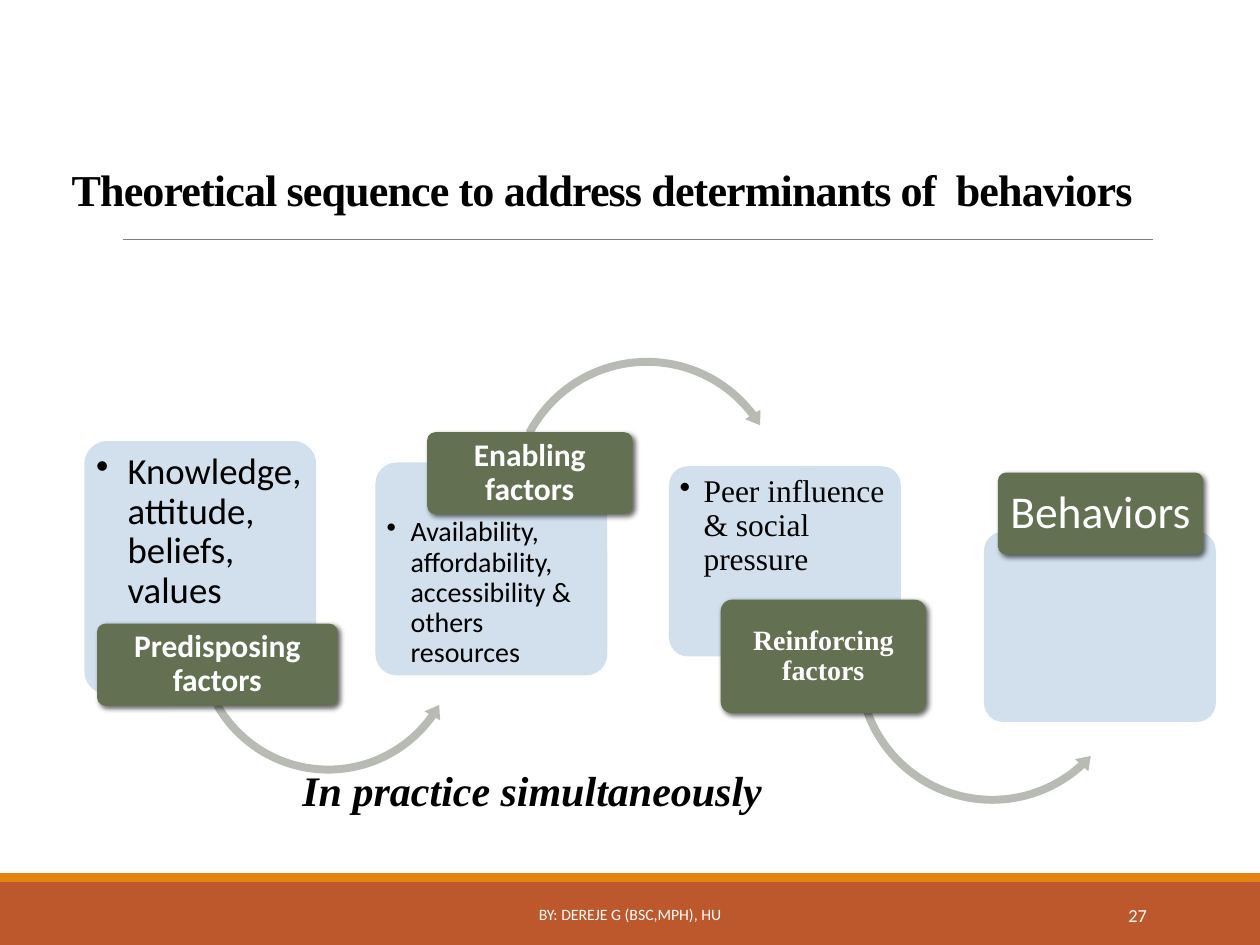
"""Builds the slide on the sequence of determinants of behavior."""
from dataclasses import dataclass
from typing import Optional

import pptx
import pptx.dml.color
import pptx.enum.shapes
import pptx.enum.text
import pptx.oxml
import pptx.oxml.ns
import pptx.util

SHAPES = pptx.enum.shapes.MSO_SHAPE
ALIGN = pptx.enum.text.PP_ALIGN
ANCHOR = pptx.enum.text.MSO_ANCHOR
NAMESPACE = pptx.oxml.ns.nsdecls("a")

# The grid has 100 columns and 75 rows, each a tenth of an inch.
COLUMNS, ROWS = 100, 75
CELL = pptx.util.Inches(0.1)

COLORS = {
    "band": "BD582C",
    "stripe": "E48312",
    "rule": "808080",
    "card": "CCDDEA",
    "label": "637052",
    "arrow": "B7BBB3",
    "dark": "000000",
    "light": "FFFFFF",
}
SERIF, SANS = "Times New Roman", "Calibri"
CARD_WIDTH = 18.4


@dataclass(frozen=True)
class Area:
    """A rectangle in grid columns and rows."""
    column: float
    row: float
    width: float
    height: float

    def lengths(self) -> list:
        return [round(n * CELL) for n in (self.column, self.row, self.width, self.height)]


@dataclass(frozen=True)
class Arrow:
    area: Area
    kind: SHAPES
    adjustments: tuple


@dataclass(frozen=True)
class Stage:
    card: Area
    label: Area
    heading: str
    heading_size: float
    bold: bool = True
    font: str = SANS
    detail: str = ""
    detail_size: float = 18
    indent: float = 1.9
    text_top: float = 0.4
    arrow: Optional[Arrow] = None


STAGES = [
    Stage(Area(6.7, 35, CARD_WIDTH, 20.1), Area(7.7, 49.5, 19.1, 6.5),
          "Predisposing factors", 18,
          detail="Knowledge, attitude, beliefs, values", detail_size=21, indent=2.5,
          arrow=Arrow(Area(15.2, 40.1, 21.7, 21.7), SHAPES.LEFT_CIRCULAR_ARROW,
                      (0.029, 3.49, 21.23, 90.22, 0.033))),
    Stage(Area(29.8, 36.7, CARD_WIDTH, 16.9), Area(33.9, 34.3, 16.3, 6.5),
          "Enabling factors", 18,
          detail="Availability, affordability, accessibility & others resources",
          detail_size=16, text_top=3.9,
          arrow=Arrow(Area(40.1, 28, 22.5, 22.5), SHAPES.CIRCULAR_ARROW,
                      (0.028, 3.37, 193.72, 124.6, 0.032))),
    Stage(Area(53.1, 37, CARD_WIDTH, 15.1), Area(57.2, 47.6, 16.3, 9),
          "Reinforcing factors", 16, font=SERIF,
          detail="Peer influence & social pressure", text_top=0.3,
          arrow=Arrow(Area(67.5, 41.7, 22.5, 22.5), SHAPES.LEFT_CIRCULAR_ARROW,
                      (0.028, 3.36, 28.59, 97.72, 0.032))),
    Stage(Area(78.1, 42.2, CARD_WIDTH, 15.1), Area(79.2, 37.5, 16.3, 6.5),
          "Behaviors", 26, bold=False),
]


def color(name: str) -> pptx.dml.color.RGBColor:
    return pptx.dml.color.RGBColor.from_string(COLORS[name])


def add_shape(page, kind, area: Area, fill: str, adjustments: tuple = ()):
    shape = page.shapes.add_shape(kind, *area.lengths())
    shape.shadow.inherit = False
    shape.fill.solid()
    shape.fill.fore_color.rgb = color(fill)
    shape.line.fill.background()
    for index, value in enumerate(adjustments):
        shape.adjustments[index] = value
    return shape


def write(shape, text: str, *, size: float, font: str = SANS, fill: str = "dark",
          bold: bool = False, italic: bool = False, align=ALIGN.LEFT,
          anchor=ANCHOR.MIDDLE, spacing: float = 1.0,
          insets: tuple = (1, 0.5, 1, 0.5), tracking: float = 0,
          bullet_indent: float = 0) -> None:
    """Insets run left, top, right, bottom; they and the indent are in grid cells."""
    frame = shape.text_frame
    frame.word_wrap = True
    frame.vertical_anchor = anchor
    (frame.margin_left, frame.margin_top,
     frame.margin_right, frame.margin_bottom) = [round(n * CELL) for n in insets]
    para = frame.paragraphs[0]
    para.alignment = align
    para.line_spacing = spacing
    span = para.add_run()
    span.text = text
    span.font.name = font
    span.font.size = pptx.util.Pt(size)
    span.font.bold = bold
    span.font.italic = italic
    span.font.color.rgb = color(fill)
    if tracking:
        span.font._element.set("spc", str(round(tracking * 100)))
    if bullet_indent:
        properties = para._p.get_or_add_pPr()
        indent = round(bullet_indent * CELL)
        properties.set("marL", str(indent))
        properties.set("indent", str(-indent))
        properties.append(pptx.oxml.parse_xml(f'<a:buChar {NAMESPACE} char="•"/>'))


def add_text(page, area: Area, text: str, **style) -> None:
    write(page.shapes.add_textbox(*area.lengths()), text, **style)


def make_translucent(shape, percent: int) -> None:
    tint = shape.fill._xPr.find(".//" + pptx.oxml.ns.qn("a:srgbClr"))
    tint.append(pptx.oxml.parse_xml(f'<a:alpha {NAMESPACE} val="{percent * 1000}"/>'))


def cast_shadow(shape) -> None:
    effects = shape._element.spPr.find(pptx.oxml.ns.qn("a:effectLst"))
    effects.append(pptx.oxml.parse_xml(
        f'<a:outerShdw {NAMESPACE} blurRad="38100" dist="25400" dir="2700000" rotWithShape="0">'
        f'<a:srgbClr val="{COLORS["dark"]}"><a:alpha val="60000"/></a:srgbClr></a:outerShdw>'))


def add_rule(page, left: float, right: float, row: float) -> None:
    ends = [round(n * CELL) for n in (left, row, right, row)]
    rule = page.shapes.add_connector(pptx.enum.shapes.MSO_CONNECTOR.STRAIGHT, *ends)
    rule.line.color.rgb = color("rule")
    rule.line.width = pptx.util.Pt(0.5)
    rule._element.spPr.append(pptx.oxml.parse_xml(f"<a:effectLst {NAMESPACE}/>"))


def add_stage(page, stage: Stage) -> None:
    """Draws the card, then the arrow to the next stage, then the label on top."""
    card = add_shape(page, SHAPES.ROUNDED_RECTANGLE, stage.card, "card", (0.1,))
    make_translucent(card, 90)
    if stage.detail:
        write(card, stage.detail, size=stage.detail_size, font=stage.font,
              anchor=ANCHOR.TOP, spacing=0.9, bullet_indent=stage.indent,
              insets=(0.4, stage.text_top, 0.3, 0))
    if stage.arrow:
        add_shape(page, stage.arrow.kind, stage.arrow.area, "arrow", stage.arrow.adjustments)
    label = add_shape(page, SHAPES.ROUNDED_RECTANGLE, stage.label, "label", (0.1,))
    cast_shadow(label)
    write(label, stage.heading, size=stage.heading_size, font=stage.font, fill="light",
          bold=stage.bold, align=ALIGN.CENTER, spacing=0.9, insets=(0.4, 0.3, 0.4, 0.3))


def main() -> None:
    deck = pptx.Presentation()
    deck.slide_width, deck.slide_height = COLUMNS * CELL, ROWS * CELL
    page = deck.slides.add_slide(deck.slide_layouts[6])

    add_shape(page, SHAPES.RECTANGLE, Area(0, 70, COLUMNS, 5), "band")
    add_shape(page, SHAPES.RECTANGLE, Area(0, 69.3, COLUMNS, 0.7), "stripe")
    add_rule(page, 9.8, 91.5, 19)
    add_text(page, Area(4.7, 12.5, 91.9, 8.5),
             "Theoretical sequence to address determinants of  behaviors",
             size=25.2, font=SERIF, bold=True, anchor=ANCHOR.BOTTOM, spacing=0.85,
             tracking=-0.5, insets=(1, 0.5, 1, 3.9))
    for stage in STAGES:
        add_stage(page, stage)
    add_text(page, Area(30.2, 70.6, 39.6, 4), "BY: DEREJE G (BSC,MPH), HU",
             size=9, fill="light", align=ALIGN.CENTER)
    add_text(page, Area(81.2, 70.6, 10.8, 4), "27",
             size=10.5, fill="light", align=ALIGN.RIGHT)
    add_text(page, Area(24, 60.8, 67.5, 8.5), "In practice simultaneously",
             size=24, font=SERIF, bold=True, italic=True, anchor=ANCHOR.BOTTOM,
             insets=(0, 0.5, 0, 4.6))
    deck.save("out.pptx")


if __name__ == "__main__":
    main()
